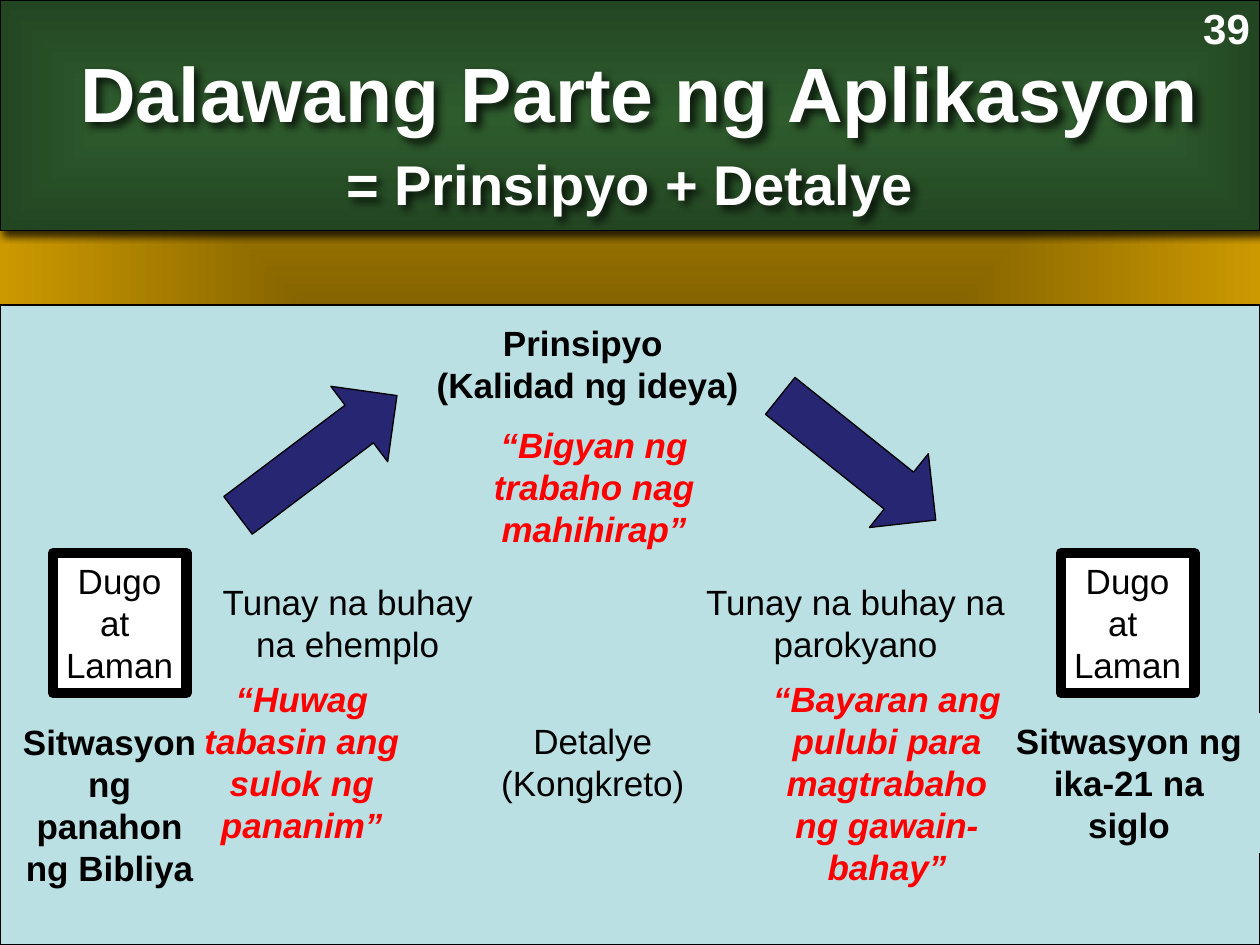
from lxml import etree
from pptx import Presentation
from pptx.dml.color import RGBColor
from pptx.enum.shapes import MSO_SHAPE as Shape
from pptx.enum.text import MSO_ANCHOR as Anchor, MSO_AUTO_SIZE as AutoSize, PP_ALIGN as Align
from pptx.oxml import parse_xml
from pptx.oxml.ns import nsdecls, qn
from pptx.util import Inches, Pt

BLACK = RGBColor(0x00, 0x00, 0x00)
WHITE = RGBColor(0xFF, 0xFF, 0xFF)
RED = RGBColor(0xFF, 0x00, 0x00)
PALE_BLUE = RGBColor(0xBB, 0xE0, 0xE3)
NAVY = RGBColor(0x26, 0x26, 0x73)
BROWN = RGBColor(0x5E, 0x47, 0x00)
GOLD = RGBColor(0xCC, 0x99, 0x00)
GREEN = RGBColor(0x2E, 0x5C, 0x2D)
DARK_GREEN = RGBColor(0x23, 0x46, 0x22)


def radiate(fill, root, inner, outer):
    """Fill with a gradient that spreads from the centre to the edges."""
    fill.gradient()
    for stop, color, position in zip(fill.gradient_stops, (inner, outer), (0, 1)):
        stop.color.rgb = color
        stop.position = position
    linear = root.find(".//" + qn("a:lin"))
    linear.getparent().replace(linear, parse_xml(
        f'<a:path {nsdecls("a")} path="shape">'
        '<a:fillToRect l="50000" t="50000" r="50000" b="50000"/></a:path>'))


def cast_shadow(shape):
    """Give a shape, or the text of an unfilled one, a soft black shadow."""
    shape.shadow.inherit = False
    effects = shape._element.spPr.find(qn("a:effectLst"))
    shadow = etree.SubElement(effects, qn("a:outerShdw"), blurRad=str(Pt(5)),
                              dist=str(Pt(2.8)), dir="2700000", algn="tl", rotWithShape="0")
    color = etree.SubElement(shadow, qn("a:srgbClr"), val=str(BLACK))
    etree.SubElement(color, qn("a:alpha"), val="75000")


def write(shape, paragraphs, size=20, color=BLACK, bold=False, italic=False, wrap=True):
    """Write centred paragraphs; a newline inside one is a line break."""
    frame = shape.text_frame
    frame.word_wrap = wrap
    frame.auto_size = AutoSize.SHAPE_TO_FIT_TEXT
    frame.vertical_anchor = Anchor.TOP
    for index, text in enumerate(paragraphs):
        paragraph = frame.add_paragraph() if index else frame.paragraphs[0]
        paragraph.alignment = Align.CENTER
        for number, line in enumerate(text.split("\n")):
            if number:
                paragraph.add_line_break()
            run = paragraph.add_run()
            run.text = line
            run.font.name, run.font.size = "Arial", Pt(size)
            run.font.color.rgb = color
            run.font.bold, run.font.italic = bold, italic


def add_block(slide, box, fill=None, border=None, preset=Shape.RECTANGLE):
    """Add a flat preset shape with an optional fill and black border."""
    block = slide.shapes.add_shape(preset, *map(Inches, box))
    block.shadow.inherit = False
    if fill is not None:
        block.fill.solid()
        block.fill.fore_color.rgb = fill
    if border:
        block.line.color.rgb = BLACK
        block.line.width = Pt(border)
    else:
        block.line.fill.background()
    return block


def add_header(slide, box):
    """Place the green banner with title, subtitle and page number."""
    left, top, width, height = box
    banner = add_block(slide, box, border=0.75)
    radiate(banner.fill, banner._element, GREEN, DARK_GREEN)
    cast_shadow(banner)

    title = slide.shapes.title
    slide.shapes._spTree.append(title._element)
    title.left, title.top = Inches(left + 0.33), Inches(top + 0.31)
    title.width, title.height = Inches(width - 0.5), Inches(0.84)
    write(title, ["Dalawang Parte ng Aplikasyon"], 44, WHITE, bold=True)
    cast_shadow(title)

    subtitle = slide.shapes.add_textbox(
        *map(Inches, (left + 0.75, top + 1.14, width - 1.5, 0.64)))
    write(subtitle, ["= Prinsipyo + Detalye"], 32, WHITE, bold=True)
    cast_shadow(subtitle)

    page = slide.shapes.add_textbox(
        *map(Inches, (left + width - 0.55, top - 0.03, 0.57, 0.51)))
    write(page, ["39"], 24, WHITE, bold=True, wrap=False)


def add_diagram(slide, box):
    """Place the path from the Bible's situation through principle to today."""
    left, top, width, height = box
    add_block(slide, box, PALE_BLUE, 0.75)

    def within(x, y, w, h):
        return left + x, top + y, w, h

    labels = [
        ((0.08, 3.25, 1.58, 1.78), ["Sitwasyon ng panahon ng Bibliya"], True),
        ((3.83, 3.24, 1.75, 0.77), ["Detalye\n(Kongkreto)"], False),
        ((1.6, 2.14, 2.32, 0.77), ["Tunay na buhay na ehemplo"], False),
        ((5.5, 2.14, 2.58, 0.77), ["Tunay na buhay na parokyano"], False),
        ((3.33, 0.08, 2.67, 0.77), ["Prinsipyo ", "(Kalidad ng ideya)"], True),
        ((7.92, 3.24, 2.08, 1.11), ["Sitwasyon ng ika-21 na siglo"], True),
    ]
    for place, paragraphs, bold in labels:
        write(add_block(slide, within(*place), PALE_BLUE), paragraphs, bold=bold)

    for x in (0.42, 8.42):
        person = add_block(slide, within(x, 1.97, 1.06, 1.11), WHITE, 6)
        write(person, ["Dugo", "at ", "Laman"], wrap=False)

    for x, y, angle in ((1.73, 0.82, 323), (6.02, 0.84, 38.6)):
        arrow = add_block(slide, within(x, y, 1.58, 0.75), NAVY, 0.75, Shape.RIGHT_ARROW)
        arrow.rotation = angle

    quotes = [
        ((1.45, 2.91, 1.89, 1.45), "“Huwag tabasin ang sulok ng pananim”"),
        ((6, 2.91, 2.08, 1.78), "“Bayaran ang pulubi para magtrabaho ng gawain-bahay”"),
        ((3.77, 0.89, 1.89, 1.11), "“Bigyan ng trabaho nag mahihirap”"),
    ]
    for place, words in quotes:
        quote = slide.shapes.add_textbox(*map(Inches, within(*place)))
        write(quote, [words], color=RED, bold=True, italic=True)


def main():
    """Build the slide and save it."""
    deck = Presentation()
    deck.slide_width, deck.slide_height = Inches(10), Inches(7.5)
    slide = deck.slides.add_slide(deck.slide_layouts[5])
    radiate(slide.background.fill, slide._element, BROWN, GOLD)
    add_diagram(slide, (0, 2.42, 10, 5.08))
    add_header(slide, (0, 0, 10, 1.83))
    deck.save("out.pptx")


if __name__ == "__main__":
    main()
